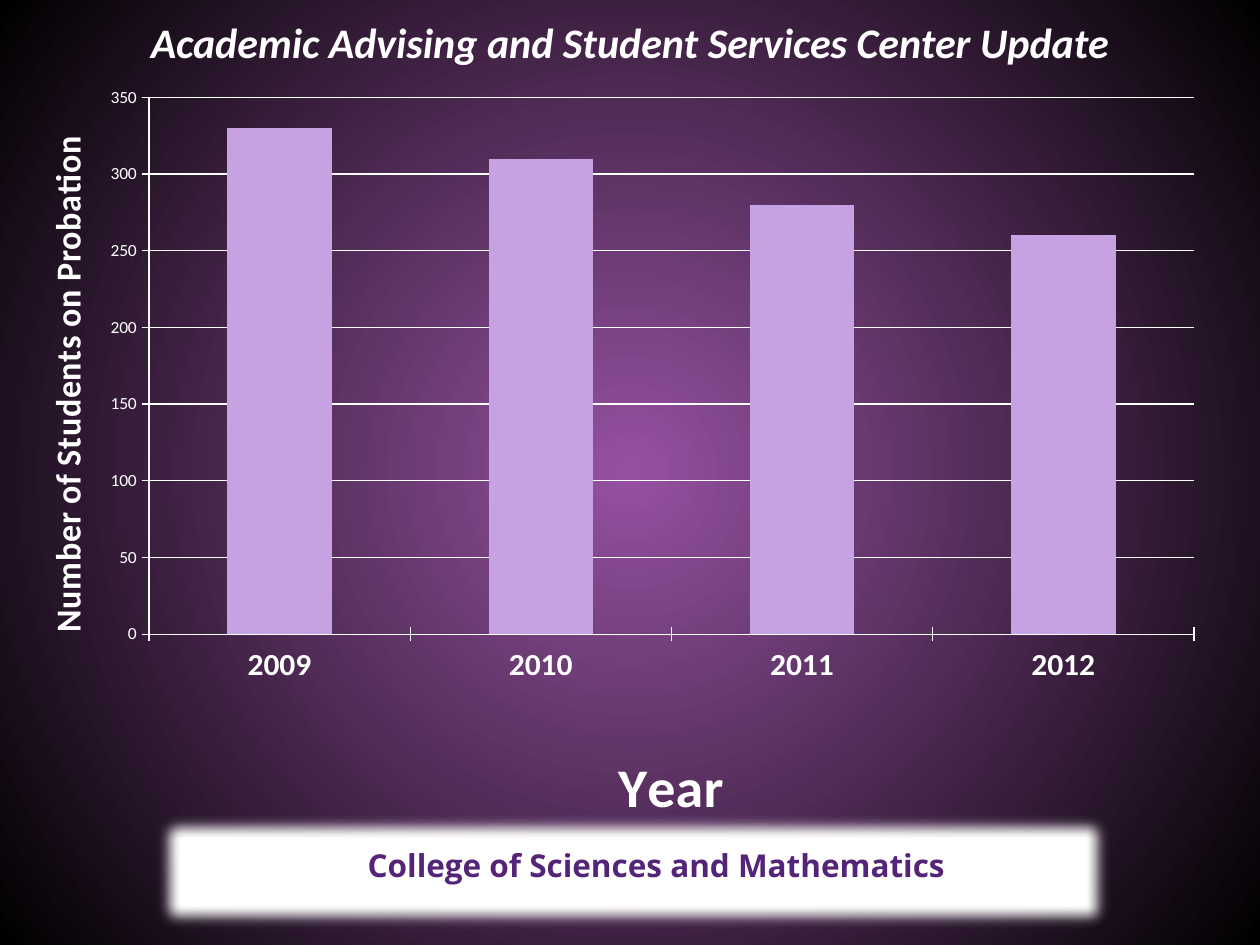
from lxml.etree import SubElement
from pptx import Presentation
from pptx.chart.data import CategoryChartData
from pptx.dml.color import RGBColor
from pptx.enum.chart import XL_CHART_TYPE, XL_TICK_MARK
from pptx.enum.shapes import MSO_SHAPE
from pptx.enum.text import MSO_ANCHOR, MSO_AUTO_SIZE, PP_ALIGN
from pptx.oxml.ns import qn
from pptx.oxml.xmlchemy import OxmlElement
from pptx.util import Emu, Pt

PX = 914400 // 126
PAGE = (1260, 945)

TITLE = "Academic Advising and Student Services Center Update"
COLLEGE = "College of Sciences and Mathematics"
PROBATION = {"2009": 330, "2010": 310, "2011": 280, "2012": 260}

TITLE_AT = (0, 10, 1260, 63)
BANNER_AT = (150, 809, 966, 126)
COLLEGE_AT = (189, 840, 935, 50)
CHART_AT = (0, 73, 1218, 766)
PLOT_AT = (149, 98, 1045, 552)

WHITE = "FFFFFF"
BAR = "C7A2E3"
GLOW = ["9651A1", "000000"]
TITLE_FONT = {"name": "Calibri", "size": Pt(24), "bold": True, "italic": True}
COLLEGE_FONT = {"name": "Open Sans", "size": Pt(18), "bold": True}
CHART_FONT = {"name": "Calibri", "size": Pt(10), "bold": False}
YEAR_FONT = {"name": "Calibri", "size": Pt(18), "bold": True}


def color(value):
    return RGBColor.from_string(value)


def px(lengths):
    return [Emu(length * PX) for length in lengths]


def style(font, values, ink):
    for name, value in values.items():
        setattr(font, name, value)
    font.color.rgb = color(ink)


def write(box, text, values, ink):
    box.left, box.top, box.width, box.height = px(box_places[text])
    frame = box.text_frame
    frame.word_wrap = True
    frame.auto_size = MSO_AUTO_SIZE.SHAPE_TO_FIT_TEXT
    frame.vertical_anchor = MSO_ANCHOR.TOP
    para = frame.paragraphs[0]
    para.alignment = PP_ALIGN.CENTER
    span = para.add_run()
    span.text = text
    style(span.font, values, ink)


def lay_out(parent, index, place, inner=False):
    layout = parent.find(qn("c:layout"))
    if layout is None:
        layout = OxmlElement("c:layout")
        parent.insert(index, layout)
    manual = SubElement(layout, qn("c:manualLayout"))
    values = {"layoutTarget": "inner"} if inner else {}
    values |= {"xMode": "edge", "yMode": "edge"}
    values["x"] = (place[0] - CHART_AT[0]) / CHART_AT[2]
    values["y"] = (place[1] - CHART_AT[1]) / CHART_AT[3]
    if inner:
        values["w"] = place[2] / CHART_AT[2]
        values["h"] = place[3] / CHART_AT[3]
    for name, value in values.items():
        text = value if isinstance(value, str) else f"{value:.4f}"
        SubElement(manual, qn("c:" + name)).set("val", text)


def format_axis(axis, title, size, place, labels):
    axis.major_tick_mark = XL_TICK_MARK.CROSS
    axis.minor_tick_mark = XL_TICK_MARK.NONE
    axis.format.line.color.rgb = color(WHITE)
    style(axis.tick_labels.font, labels, WHITE)
    span = axis.axis_title.text_frame.paragraphs[0].add_run()
    span.text = title
    style(span.font, {"name": "Calibri", "size": Pt(size), "bold": True}, WHITE)
    lay_out(axis.axis_title._element, 1, place)


box_places = {TITLE: TITLE_AT, COLLEGE: COLLEGE_AT}

deck = Presentation()
deck.slide_width, deck.slide_height = px(PAGE)
page = deck.slides.add_slide(deck.slide_layouts[5])

fill = page.background.fill
fill.gradient()
for position, (stop, ink) in enumerate(zip(fill.gradient_stops, GLOW)):
    stop.position = position
    stop.color.rgb = color(ink)
gradient = page.background._cSld.find(".//" + qn("a:gradFill"))
line = gradient.find(qn("a:lin"))
circle = OxmlElement("a:path")
circle.set("path", "circle")
center = SubElement(circle, qn("a:fillToRect"))
for side in "ltrb":
    center.set(side, "50000")
gradient.replace(line, circle)

banner = page.shapes.add_shape(MSO_SHAPE.RECTANGLE, *px(BANNER_AT))
banner.fill.solid()
banner.fill.fore_color.rgb = color(WHITE)
banner.line.fill.background()
banner.shadow.inherit = False
effects = banner._element.spPr.find(qn("a:effectLst"))
SubElement(effects, qn("a:softEdge")).set("rad", "112500")

write(page.shapes.add_textbox(*px(COLLEGE_AT)), COLLEGE, COLLEGE_FONT, "542478")
write(page.shapes.title, TITLE, TITLE_FONT, WHITE)

data = CategoryChartData()
data.categories = list(PROBATION)
data.add_series("Series 1", list(PROBATION.values()))
chart = page.shapes.add_chart(
    XL_CHART_TYPE.COLUMN_CLUSTERED, *px(CHART_AT), data
).chart
chart.has_legend = False
chart.has_title = False
style(chart.font, CHART_FONT, WHITE)

plot = chart.plots[0]
plot.gap_width = 150
plot.vary_by_categories = False
series = plot.series[0]
series.format.fill.solid()
series.format.fill.fore_color.rgb = color(BAR)
lay_out(chart._chartSpace.find(".//" + qn("c:plotArea")), 0, PLOT_AT, inner=True)

counts = chart.value_axis
counts.minimum_scale, counts.maximum_scale, counts.major_unit = 0, 350, 50
counts.has_major_gridlines = True
counts.major_gridlines.format.line.color.rgb = color(WHITE)
format_axis(counts, "Number of Students on Probation", 20, (36, 145), CHART_FONT)
format_axis(chart.category_axis, "Year", 32, (608, 757), YEAR_FONT)

deck.save("out.pptx")
